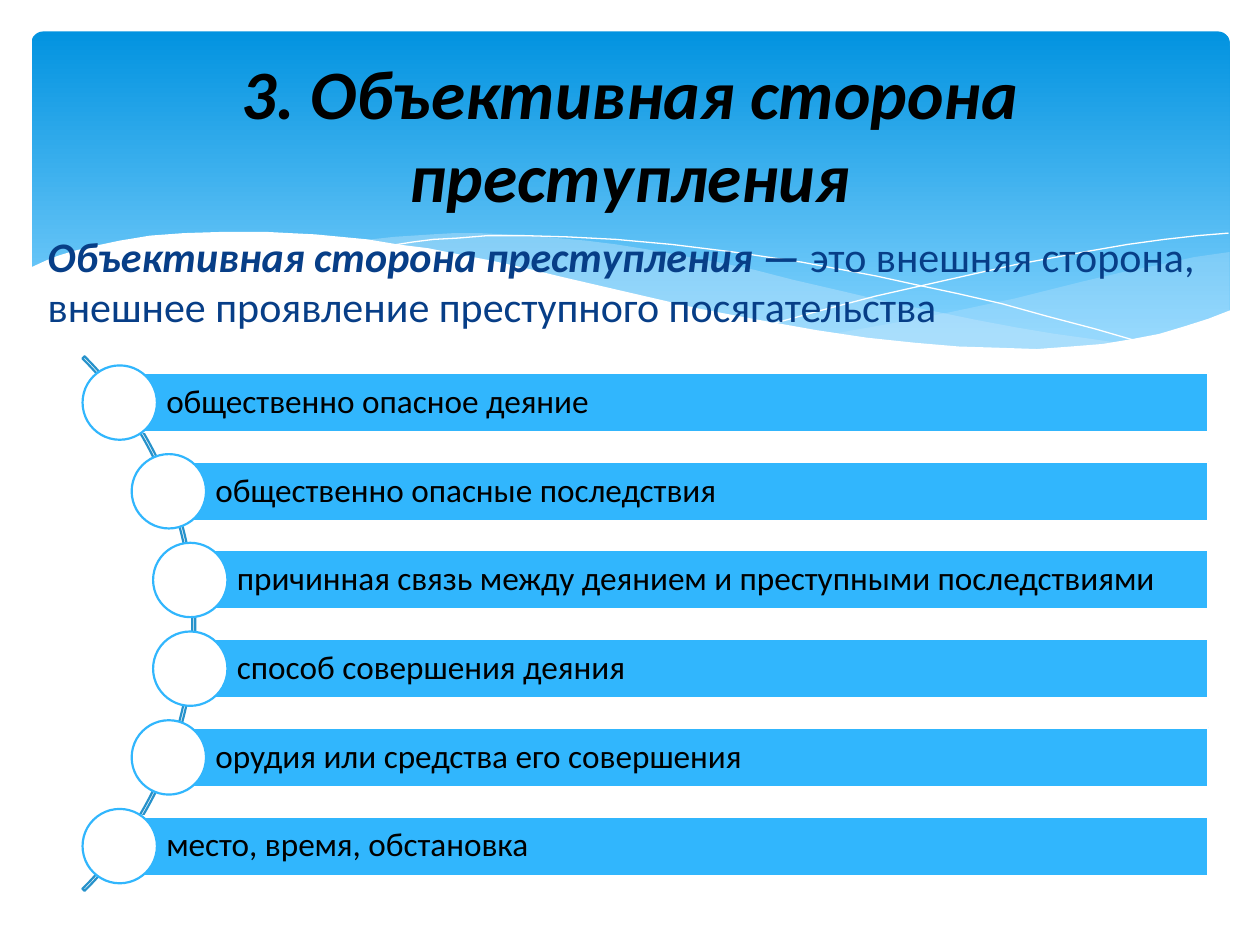
from pptx import Presentation
from pptx.dml.color import RGBColor
from pptx.enum.shapes import MSO_SHAPE
from pptx.enum.text import MSO_ANCHOR, PP_ALIGN
from pptx.oxml.ns import qn
from pptx.util import Inches, Pt
from lxml import etree

ROUNDED, RECTANGLE = MSO_SHAPE.ROUNDED_RECTANGLE, MSO_SHAPE.RECTANGLE
OVAL, ARC = MSO_SHAPE.OVAL, MSO_SHAPE.BLOCK_ARC
MIDDLE, CENTER, LEFT = MSO_ANCHOR.MIDDLE, PP_ALIGN.CENTER, PP_ALIGN.LEFT

WHITE = RGBColor(0xFF, 0xFF, 0xFF)
BLACK = RGBColor(0x00, 0x00, 0x00)
SKY_TOP = RGBColor(0x02, 0x93, 0xE0)
SKY_BOTTOM = RGBColor(0x83, 0xD3, 0xFE)
MIST = RGBColor(0xC6, 0xE7, 0xFC)
NAVY = RGBColor(0x07, 0x3E, 0x87)
BAR_BLUE = RGBColor(0x31, 0xB6, 0xFD)
ARC_BLUE = RGBColor(0x27, 0x92, 0xCB)


def paint(shape, fill=None, line=None, width=1.25, opacity=None):
    """Set fill and outline; None means no fill or no outline."""
    shape.shadow.inherit = False
    if fill is None:
        shape.fill.background()
    else:
        shape.fill.solid()
        shape.fill.fore_color.rgb = fill
    if opacity is not None:
        color = shape.fill._xPr.find(qn("a:solidFill"))[0]
        etree.SubElement(color, qn("a:alpha"), val=str(opacity * 1000))
    if line is None:
        shape.line.fill.background()
    else:
        shape.line.color.rgb = line
        shape.line.width = Pt(width)


def add_span(para, text, size, color, bold=False, italic=False):
    span = para.add_run()
    span.text = text
    span.font.name = "Calibri"
    span.font.size = Pt(size)
    span.font.color.rgb = color
    span.font.bold = bold
    span.font.italic = italic


deck = Presentation()
deck.slide_width, deck.slide_height = Inches(10), Inches(7.5)
page = deck.slides.add_slide(deck.slide_layouts[6])
shapes = page.shapes

# Header panel
panel = shapes.add_shape(ROUNDED, Inches(0.25), Inches(0.25), Inches(9.51), Inches(2.7))
panel.adjustments[0] = 0.034
paint(panel)
panel.fill.gradient()
panel.fill.gradient_angle = 270
for stop, position, color in zip(panel.fill.gradient_stops, (0, 0.9), (SKY_TOP, SKY_BOTTOM)):
    stop.position = position
    stop.color.rgb = color

# Waves, in hundredths of an inch
RIGHT_WAVE = [
    (976, 200), (948, 204), (921, 210), (891, 216), (861, 223), (805, 237), (753, 248),
    (706, 257), (661, 265), (691, 269), (719, 272), (745, 275), (769, 277), (803, 278),
    (835, 277), (863, 275), (889, 272), (913, 267), (935, 262), (949, 257), (963, 252),
    (976, 247)]
MIDDLE_WAVE = [
    (893, 273), (866, 269), (837, 265), (807, 260), (775, 254), (741, 247), (706, 240),
    (668, 231), (629, 222), (598, 214), (569, 208), (541, 203), (514, 198), (489, 194),
    (465, 191), (442, 189), (420, 187), (399, 186), (380, 185), (361, 185), (344, 186),
    (313, 188), (286, 191), (323, 196), (362, 203), (404, 211), (449, 222), (491, 232),
    (530, 240), (566, 248), (601, 255), (634, 261), (665, 266), (695, 270), (722, 274),
    (748, 276), (773, 277), (796, 278), (828, 278), (857, 277), (876, 275)]
FALLING_CREST = [
    (309, 195), (328, 192), (344, 190), (363, 189), (387, 187), (416, 187), (450, 188),
    (489, 190), (533, 194), (582, 200), (636, 208), (695, 219), (727, 226), (760, 233),
    (795, 241), (831, 251), (869, 261), (907, 272)]
RISING_CREST = [
    (613, 257), (653, 246), (695, 235), (748, 223), (806, 210), (866, 199), (895, 194),
    (924, 190), (951, 187), (975, 185)]
WHITE_WAVE = [
    (977, 246), (959, 253), (940, 259), (920, 265), (899, 269), (875, 273), (850, 275),
    (823, 277), (793, 276), (761, 275), (726, 272), (688, 268), (648, 262), (603, 254),
    (555, 245), (503, 233), (447, 220), (418, 213), (391, 207), (365, 202), (340, 197),
    (316, 194), (292, 190), (271, 188), (250, 186), (230, 185), (211, 184), (177, 184),
    (146, 185), (119, 187), (95, 191), (76, 195), (59, 199), (46, 203), (36, 207),
    (23, 213), (23, 329), (977, 329)]
waves = [
    (RIGHT_WAVE, True, dict(fill=MIST, opacity=29)),
    (MIDDLE_WAVE, True, dict(fill=MIST, opacity=40)),
    (FALLING_CREST, False, dict(line=WHITE, width=0)),
    (RISING_CREST, False, dict(line=WHITE, width=0)),
    (WHITE_WAVE, True, dict(fill=WHITE)),
]
for points, closed, style in waves:
    builder = shapes.build_freeform(*points[0], scale=Inches(0.01))
    builder.add_line_segments(points[1:], close=closed)
    paint(builder.convert_to_shape(), **style)

# Title and definition
title = shapes.add_textbox(Inches(0.5), Inches(0.37), Inches(9), Inches(1.37)).text_frame
title.word_wrap = True
title.vertical_anchor = MIDDLE
title.paragraphs[0].alignment = CENTER
add_span(title.paragraphs[0], "3. Объективная сторона преступления", 39.6, BLACK,
         bold=True, italic=True)

definition = shapes.add_textbox(Inches(0.28), Inches(1.78), Inches(9.45), Inches(0.94)).text_frame
definition.word_wrap = True
para = definition.paragraphs[0]
para.space_before = Pt(4.8)
add_span(para, "Объективная сторона преступления — ", 24, NAVY, bold=True, italic=True)
add_span(para, "это внешняя сторона, внешнее проявление преступного посягательства", 24, NAVY)

# Curved list: bars and circles along an arc
arc = shapes.add_shape(ARC, Inches(-4.45), Inches(1.95), Inches(6), Inches(6))
for index, value in enumerate((189, 27, 0.004)):
    arc.adjustments[index] = value
paint(arc, line=ARC_BLUE)

BAR_RIGHT, BAR_HEIGHT, FIRST_TOP, PITCH, DIAMETER = 9.59, 0.47, 2.96, 0.704, 0.59
features = [
    (0.95, "общественно опасное деяние"),
    (1.34, "общественно опасные последствия"),
    (1.51, "причинная связь между деянием и преступными последствиями"),
    (1.51, "способ совершения деяния"),
    (1.34, "орудия или средства его совершения"),
    (0.95, "место, время, обстановка"),
]
for row, (left, text) in enumerate(features):
    top = FIRST_TOP + row * PITCH
    bar = shapes.add_shape(RECTANGLE, Inches(left), Inches(top),
                           Inches(BAR_RIGHT - left), Inches(BAR_HEIGHT))
    paint(bar, fill=BAR_BLUE, line=WHITE)
    frame = bar.text_frame
    frame.word_wrap = True
    frame.vertical_anchor = MIDDLE
    frame.margin_left = Inches(0.37)
    frame.margin_right = frame.margin_top = frame.margin_bottom = Inches(0.05)
    para = frame.paragraphs[0]
    para.alignment = LEFT
    para.line_spacing = 0.9
    add_span(para, text, 19, BLACK)

    circle = shapes.add_shape(OVAL, Inches(left - DIAMETER / 2),
                              Inches(top + (BAR_HEIGHT - DIAMETER) / 2),
                              Inches(DIAMETER), Inches(DIAMETER))
    paint(circle, fill=WHITE, line=BAR_BLUE)

deck.save("out.pptx")
